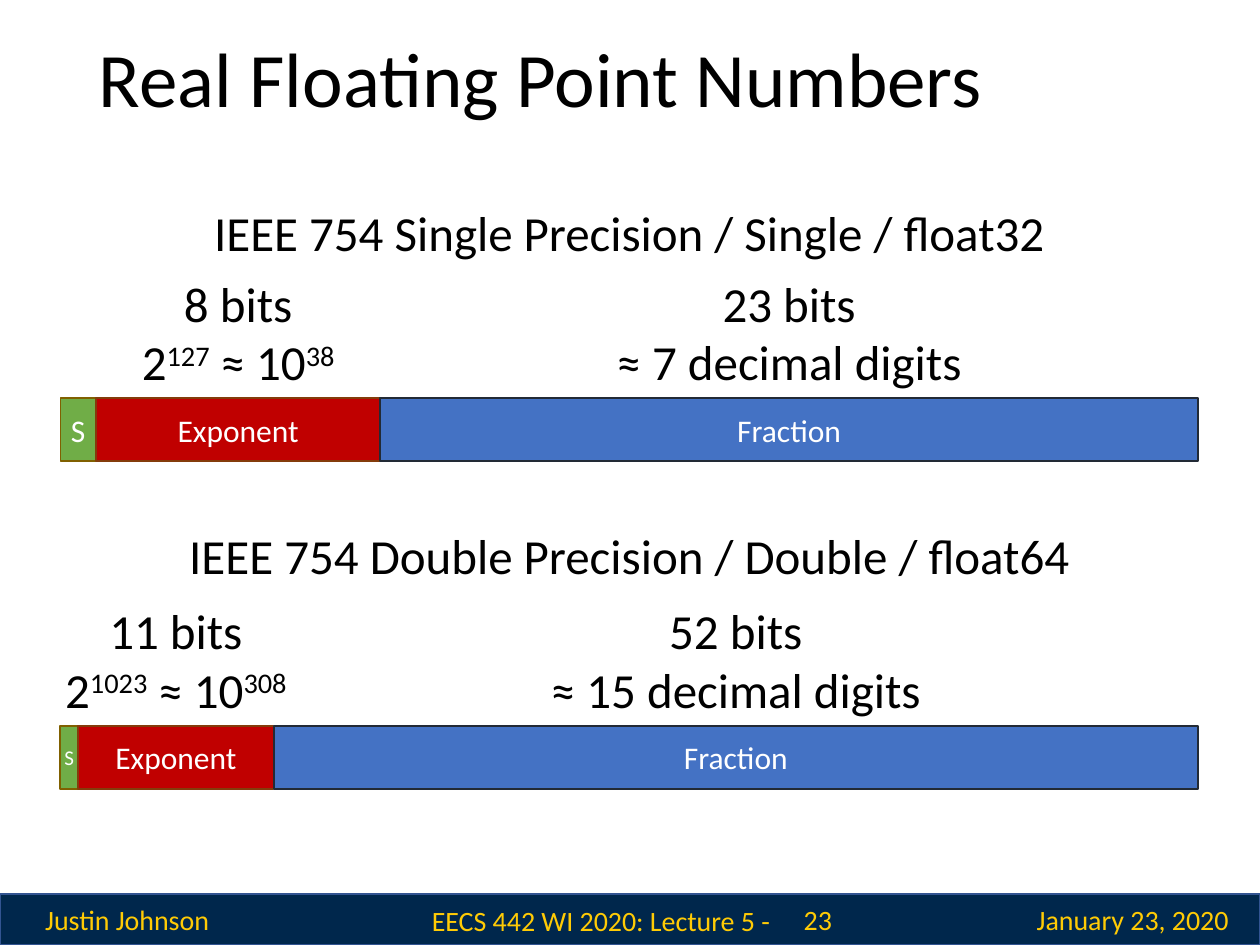
import pptx
import pptx.util
from pptx.dml.color import RGBColor
from pptx.enum.shapes import MSO_SHAPE
from pptx.enum.text import MSO_ANCHOR, PP_ALIGN

Pt = pptx.util.Pt

BLACK = RGBColor(0x00, 0x00, 0x00)
WHITE = RGBColor(0xFF, 0xFF, 0xFF)
NAVY = RGBColor(0x00, 0x27, 0x4C)
NAVY_EDGE = RGBColor(0x32, 0x54, 0x91)
MAIZE = RGBColor(0xFF, 0xCB, 0x05)
GREEN = RGBColor(0x70, 0xAD, 0x47)
GREEN_EDGE = RGBColor(0x80, 0x60, 0x00)
RED = RGBColor(0xC0, 0x00, 0x00)
RED_EDGE = RGBColor(0x84, 0x3C, 0x0B)
BLUE = RGBColor(0x44, 0x72, 0xC4)
BLUE_EDGE = RGBColor(0x22, 0x2A, 0x35)

FONT = "Calibri"
TITLE = "Real Floating Point Numbers"
FOOTER = [
    ("Justin Johnson", 0.7, 511, 144, 29),
    ("January 23, 2020", 575.3, 512, 144, 26.6),
    ("EECS 442 WI 2020: Lecture 5 - ", 237.6, 512.6, 215.3, 26.6),
    ("23", 435.6, 511, 63.4, 29),
]
FIELDS = [
    ("S", GREEN, GREEN_EDGE),
    ("Exponent", RED, RED_EDGE),
    ("Fraction", BLUE, BLUE_EDGE),
]
FORMATS = [
    {
        "heading": "IEEE 754 Single Precision / Single / float32",
        "heading_top": 112.3,
        "bar_top": 227.5,
        "bits": (1, 8, 23),
        "sign_size": 18,
        "range": [("2", False), ("127", True), (" ≈ 10", False), ("38", True)],
        "digits": "≈ 7 decimal digits",
        "label_width": 162.5,
    },
    {
        "heading": "IEEE 754 Double Precision / Double / float64",
        "heading_top": 296.6,
        "bar_top": 414.7,
        "bits": (1, 11, 52),
        "sign_size": 12,
        "range": [("2", False), ("1023", True), (" ≈ 10", False), ("308", True)],
        "digits": "≈ 15 decimal digits",
        "label_width": 172,
    },
]
BAR_LEFT, BAR_WIDTH, BAR_HEIGHT = 34.5, 650, 36
LABEL_HEIGHT = 75

presentation = pptx.Presentation()
presentation.slide_width = Pt(720)
presentation.slide_height = Pt(540)
slide = presentation.slides.add_slide(presentation.slide_layouts[6])


def write(shape, paragraphs, size, color, align=PP_ALIGN.CENTER, anchor=MSO_ANCHOR.MIDDLE):
    frame = shape.text_frame
    frame.word_wrap = True
    frame.vertical_anchor = anchor
    for index, runs in enumerate(paragraphs):
        paragraph = frame.add_paragraph() if index else frame.paragraphs[0]
        paragraph.alignment = align
        for text, raised in runs:
            run = paragraph.add_run()
            run.text = text
            run.font.name = FONT
            run.font.size = Pt(size)
            run.font.color.rgb = color
            if raised:
                run.font._element.set("baseline", "30000")


def add_text(box, paragraphs, size, color=BLACK, **options):
    shape = slide.shapes.add_textbox(*map(Pt, box))
    write(shape, paragraphs, size, color, **options)
    return shape


def add_rectangle(box, fill, edge):
    shape = slide.shapes.add_shape(MSO_SHAPE.RECTANGLE, *map(Pt, box))
    shape.shadow.inherit = False
    shape.fill.solid()
    shape.fill.fore_color.rgb = fill
    shape.line.color.rgb = edge
    shape.line.width = Pt(1)
    return shape


def add_format(layout):
    top = layout["bar_top"]
    bit_width = BAR_WIDTH / sum(layout["bits"])
    labels = {"Exponent": layout["range"], "Fraction": [(layout["digits"], False)]}
    left = BAR_LEFT
    for (name, fill, edge), bits in zip(FIELDS, layout["bits"]):
        width = bits * bit_width
        field = add_rectangle((left, top, width, BAR_HEIGHT), fill, edge)
        if name == "S":
            field.text_frame.margin_left = field.text_frame.margin_right = 0
        write(field, [[(name, False)]], layout["sign_size"] if name == "S" else 18, WHITE)
        if name in labels:
            label_width = max(width, layout["label_width"])
            label_left = left + (width - label_width) / 2
            add_text((label_left, top - LABEL_HEIGHT, label_width, LABEL_HEIGHT),
                     [[(f"{bits} bits", False)], labels[name]], 28, anchor=MSO_ANCHOR.TOP)
        left += width
    add_text((BAR_LEFT, layout["heading_top"], BAR_WIDTH, 41),
             [[(layout["heading"], False)]], 28, anchor=MSO_ANCHOR.TOP)


add_rectangle((0, 511, 720, 29), NAVY, NAVY_EDGE)
for text, *box in FOOTER:
    add_text(box, [[(text, False)]], 16, MAIZE)
title = add_text((49.5, 14.4, 621, 65), [[(TITLE, False)]], 44, align=PP_ALIGN.LEFT)
title.text_frame.paragraphs[0].line_spacing = 0.9
for layout in FORMATS:
    add_format(layout)

presentation.save("out.pptx")
